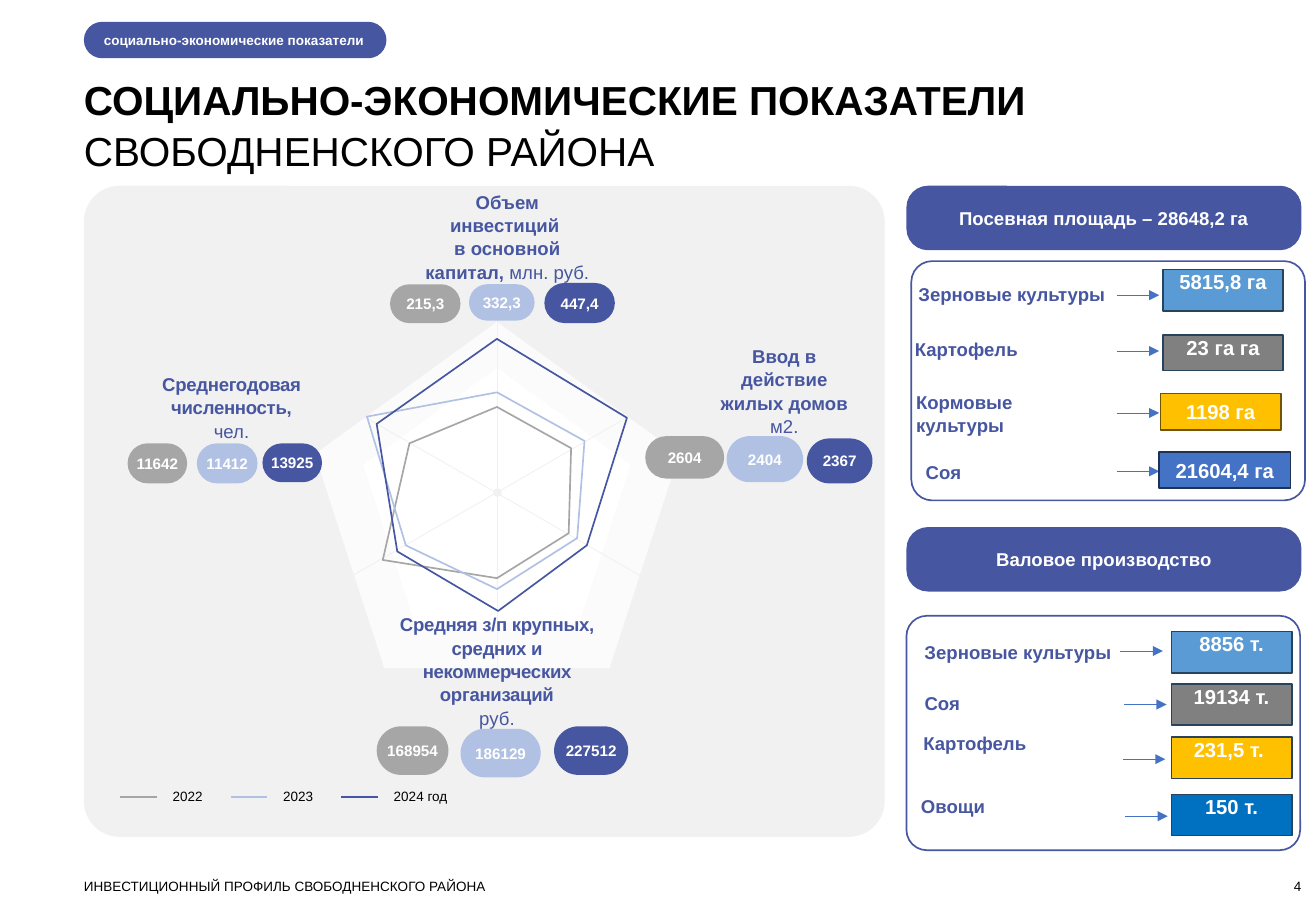
from dataclasses import dataclass

from lxml.etree import SubElement
from pptx import Presentation
from pptx.dml.color import RGBColor
from pptx.enum.shapes import MSO_CONNECTOR, MSO_SHAPE
from pptx.enum.text import MSO_ANCHOR, MSO_AUTO_SIZE, PP_ALIGN
from pptx.oxml.ns import qn
from pptx.util import Inches, Pt


@dataclass(frozen=True)
class Theme:
    font: str = "Arial"
    black: str = "000000"
    white: str = "FFFFFF"
    indigo: str = "4756A0"
    pale: str = "B1C1E4"
    gray: str = "A6A6A6"
    panel: str = "F1F1F1"
    web: str = "FBFBFB"
    sky: str = "5B9BD5"
    steel: str = "808080"
    gold: str = "FFC000"
    blue: str = "4472C4"
    ocean: str = "0070C0"
    edge: str = "28445D"
    gold_edge: str = "705400"
    blue_edge: str = "1E3256"
    title: int = 24
    value: int = 12
    label: int = 11
    pill: int = 9
    small: int = 8
    spacing: float = 1.05


THEME = Theme()
LEFT, CENTER, RIGHT = PP_ALIGN.LEFT, PP_ALIGN.CENTER, PP_ALIGN.RIGHT
TITLE = [[("СОЦИАЛЬНО-ЭКОНОМИЧЕСКИЕ ПОКАЗАТЕЛИ", True)], [("СВОБОДНЕНСКОГО РАЙОНА", False)]]
YEARS = [("2022", THEME.gray), ("2023", THEME.pale), ("2024 год", THEME.indigo)]

# Heading lines of (text, bold), heading frame, letter spacing, then a pill per year
INDICATORS = [
    ([[("Объем инвестиций ", True)],
      [("в основной капитал, ", True), ("млн. руб", False), (".", False)]],
     (3.48, 1.56, 1.39, 0.74), 0,
     [("215,3", (3.21, 2.34, 0.58, 0.32)), ("332,3", (3.86, 2.34, 0.54, 0.3)),
      ("447,4", (4.48, 2.33, 0.58, 0.33))]),
    ([[("Ввод в действие жилых домов", True)], [("м2.", False)]],
     (5.84, 2.83, 1.23, 0.74), 0,
     [("2604", (5.31, 3.59, 0.65, 0.35)), ("2404", (5.98, 3.59, 0.63, 0.38)),
      ("2367", (6.64, 3.61, 0.54, 0.37))]),
    ([[("Среднегодовая численность,", True)], [("чел.", False)]],
     (1.05, 3.06, 1.71, 0.56), -20,
     [("11642", (1.05, 3.65, 0.49, 0.33)), ("11412", (1.62, 3.65, 0.5, 0.33)),
      ("13925", (2.16, 3.65, 0.49, 0.32))]),
    ([[("Средняя з/п крупных, средних и некоммерческих организаций", True)], [("руб.", False)]],
     (3.22, 5.04, 1.74, 0.93), -20,
     [("168954", (3.1, 5.98, 0.59, 0.4)), ("186129", (3.79, 6, 0.66, 0.4)),
      ("227512", (4.56, 5.98, 0.61, 0.4))]),
]
YEAR_OUTLINES = [
    [(3.37, 3.65), (4.09, 3.35), (4.7, 3.69), (4.68, 4.39), (4.09, 4.76), (3.15, 4.61)],
    [(3.02, 3.43), (4.09, 3.23), (4.81, 3.63), (4.75, 4.43), (4.09, 4.85), (3.34, 4.49)],
    [(3.1, 3.49), (4.09, 2.79), (5.16, 3.44), (4.83, 4.49), (4.1, 5.03), (3.27, 4.54)],
]
WEB_AXES = [((4.09, 2.65), (4.09, 5.5)), ((5.19, 3.42), (2.9, 4.74)), ((2.98, 3.42), (5.27, 4.74))]

# Crop, label frame, arrow start, value, value frame, fill, edge, value set high in its box
SOWN_AREA = [
    ("Зерновые культуры", (7.46, 2.27, 1.8, 0.29), (9.19, 2.43),
     "5815,8 га", (9.57, 2.22, 0.99, 0.34), THEME.sky, THEME.edge, True),
    ("Картофель", (7.43, 2.72, 1.63, 0.29), (9.19, 2.89),
     "23 га га", (9.57, 2.76, 0.99, 0.29), THEME.steel, THEME.edge, True),
    ("Кормовые культуры", (7.44, 3.16, 1.59, 0.47), (9.19, 3.4),
     "1198 га", (9.55, 3.24, 0.99, 0.3), THEME.gold, THEME.gold_edge, False),
    ("Соя", (7.52, 3.74, 0.64, 0.29), (9.19, 3.88),
     "21604,4 га", (9.54, 3.72, 1.08, 0.3), THEME.blue, THEME.blue_edge, False),
]
GROSS_OUTPUT = [
    ("Зерновые культуры", (7.51, 5.22, 1.8, 0.29), (9.22, 5.36),
     "8856 т.", (9.64, 5.2, 0.99, 0.34), THEME.sky, THEME.edge, True),
    ("Соя", (7.51, 5.64, 0.61, 0.29), (9.25, 5.8),
     "19134 т.", (9.64, 5.63, 0.99, 0.34), THEME.steel, THEME.edge, True),
    ("Картофель", (7.5, 5.97, 1.63, 0.29), (9.24, 6.25),
     "231,5 т. ", (9.64, 6.07, 0.99, 0.34), THEME.gold, THEME.edge, True),
    ("Овощи", (7.48, 6.49, 0.9, 0.29), (9.26, 6.72),
     "150 т.", (9.64, 6.54, 0.99, 0.34), THEME.ocean, THEME.edge, True),
]
CROP_PANELS = [
    ("Посевная площадь – 28648,2 га", 1.53, (7.5, 2.15, 3.24, 1.97), SOWN_AREA),
    ("Валовое производство", 4.34, (7.46, 5.07, 3.24, 1.93), GROSS_OUTPUT),
]
ARROW_LENGTH = 0.35

deck = Presentation()
deck.slide_width, deck.slide_height = Inches(10.83), Inches(7.5)
page = deck.slides.add_slide(deck.slide_layouts[5])


def color(code):
    return RGBColor.from_string(code)


def write(box, lines, size, ink, align=LEFT, anchor=MSO_ANCHOR.TOP,
          insets=(0, 0, 0, 0), spacing=1.0, tracking=0):
    """Fill a shape with lines, each a list of (text, bold) spans."""
    frame = box.text_frame
    frame.word_wrap, frame.auto_size = True, MSO_AUTO_SIZE.NONE
    frame.vertical_anchor = anchor
    frame.margin_left, frame.margin_top, frame.margin_right, frame.margin_bottom = map(Inches, insets)
    for index, line in enumerate(lines):
        para = frame.add_paragraph() if index else frame.paragraphs[0]
        para.alignment, para.line_spacing = align, spacing
        para.font.name, para.font.size = THEME.font, Pt(size)
        para.font.color.rgb = color(ink)
        for text, bold in line:
            span = para.add_run()
            span.text, span.font.bold = text, bold
            if tracking and bold:
                span._r.get_or_add_rPr().set("spc", str(tracking))


def add_text(frame, lines, size, ink, **style):
    write(page.shapes.add_textbox(*map(Inches, frame)), lines, size, ink, **style)


def paint(shape, fill=None, line=None):
    shape.shadow.inherit = False
    if fill:
        shape.fill.solid()
        shape.fill.fore_color.rgb = color(fill)
    else:
        shape.fill.background()
    if line:
        shape.line.color.rgb, shape.line.width = color(line), Pt(1)
    else:
        shape.line.fill.background()


def add_box(kind, frame, fill=None, line=None, rounding=None):
    shape = page.shapes.add_shape(kind, *map(Inches, frame))
    paint(shape, fill, line)
    if rounding:
        shape.adjustments[0] = rounding
    return shape


def add_rounded(frame, rounding, fill=None, line=None):
    return add_box(MSO_SHAPE.ROUNDED_RECTANGLE, frame, fill, line, rounding)


def add_line(start, end, ink, width, arrow=False):
    line = page.shapes.add_connector(MSO_CONNECTOR.STRAIGHT, *map(Inches, start + end))
    line.line.color.rgb, line.line.width = color(ink), Pt(width)
    if arrow:
        SubElement(line.line._get_or_add_ln(), qn("a:tailEnd"), type="triangle")
    SubElement(line._element.spPr, qn("a:effectLst"))


title = page.shapes.title
title.left, title.top, title.width, title.height = map(Inches, (0.69, 0.6, 9.65, 0.81))
write(title, TITLE, THEME.title, THEME.black, spacing=THEME.spacing)

badge = add_rounded((0.69, 0.18, 2.49, 0.3), 0.5, THEME.indigo)
write(badge, [[("социально-экономические показатели", True)]], THEME.small, THEME.white,
      anchor=MSO_ANCHOR.MIDDLE, insets=(0.12, 0, 0, 0))
add_text((0.69, 7.23, 8, 0.13), [[("ИНВЕСТИЦИОННЫЙ ПРОФИЛЬ СВОБОДНЕНСКОГО РАЙОНА", False)]],
         THEME.small, THEME.black)
add_text((9.91, 7.23, 0.8, 0.13), [[("4", False)]], THEME.small, THEME.black,
         align=RIGHT, anchor=MSO_ANCHOR.BOTTOM)

add_rounded((0.69, 1.53, 6.59, 5.36), 0.055, THEME.panel)
add_box(MSO_SHAPE.REGULAR_PENTAGON, (2.59, 2.65, 3, 2.85), THEME.web)
add_box(MSO_SHAPE.REGULAR_PENTAGON, (2.99, 3.03, 2.2, 2.09), THEME.white)
for start, end in WEB_AXES:
    add_line(start, end, THEME.panel, 0.5)
add_box(MSO_SHAPE.OVAL, (4.06, 4.02, 0.07, 0.07), THEME.panel)

for index, ((year, ink), outline) in enumerate(zip(YEARS, YEAR_OUTLINES)):
    x = 0.99 + 0.91 * index
    add_line((x, 6.56), (x + 0.3, 6.56), ink, 1)
    add_text((x + 0.43, 6.49, 0.86, 0.13), [[(year, False)]], THEME.small, THEME.black)
    corners = [tuple(map(Inches, corner)) for corner in outline]
    builder = page.shapes.build_freeform(*corners[0])
    builder.add_line_segments(corners[1:], close=True)
    paint(builder.convert_to_shape(), line=ink)

for heading, frame, tracking, pills in INDICATORS:
    add_text(frame, heading, THEME.label, THEME.indigo, align=CENTER,
             spacing=THEME.spacing, tracking=tracking)
    for (value, pill_frame), (_, fill) in zip(pills, YEARS):
        write(add_rounded(pill_frame, 0.5, fill), [[(value, True)]], THEME.pill, THEME.white,
              align=CENTER, anchor=MSO_ANCHOR.MIDDLE)

for heading, top, panel_frame, crops in CROP_PANELS:
    header = add_rounded((7.46, top, 3.25, 0.53), 0.331, THEME.indigo)
    write(header, [[(heading, True)]], THEME.label, THEME.white,
          align=CENTER, anchor=MSO_ANCHOR.MIDDLE)
    add_rounded(panel_frame, 0.087, line=THEME.indigo)
    for crop, label_frame, (x, y), value, value_frame, fill, edge, high in crops:
        add_text(label_frame, [[(crop, True)]], THEME.label, THEME.indigo,
                 insets=(0.1, 0.05, 0.1, 0.05), spacing=THEME.spacing)
        add_line((x, y), (x + ARROW_LENGTH, y), THEME.blue, 0.5, arrow=True)
        write(add_box(MSO_SHAPE.RECTANGLE, value_frame, fill, edge), [[(value, True)]],
              THEME.value, THEME.white, align=CENTER,
              anchor=MSO_ANCHOR.TOP if high else MSO_ANCHOR.MIDDLE)

deck.save("out.pptx")
